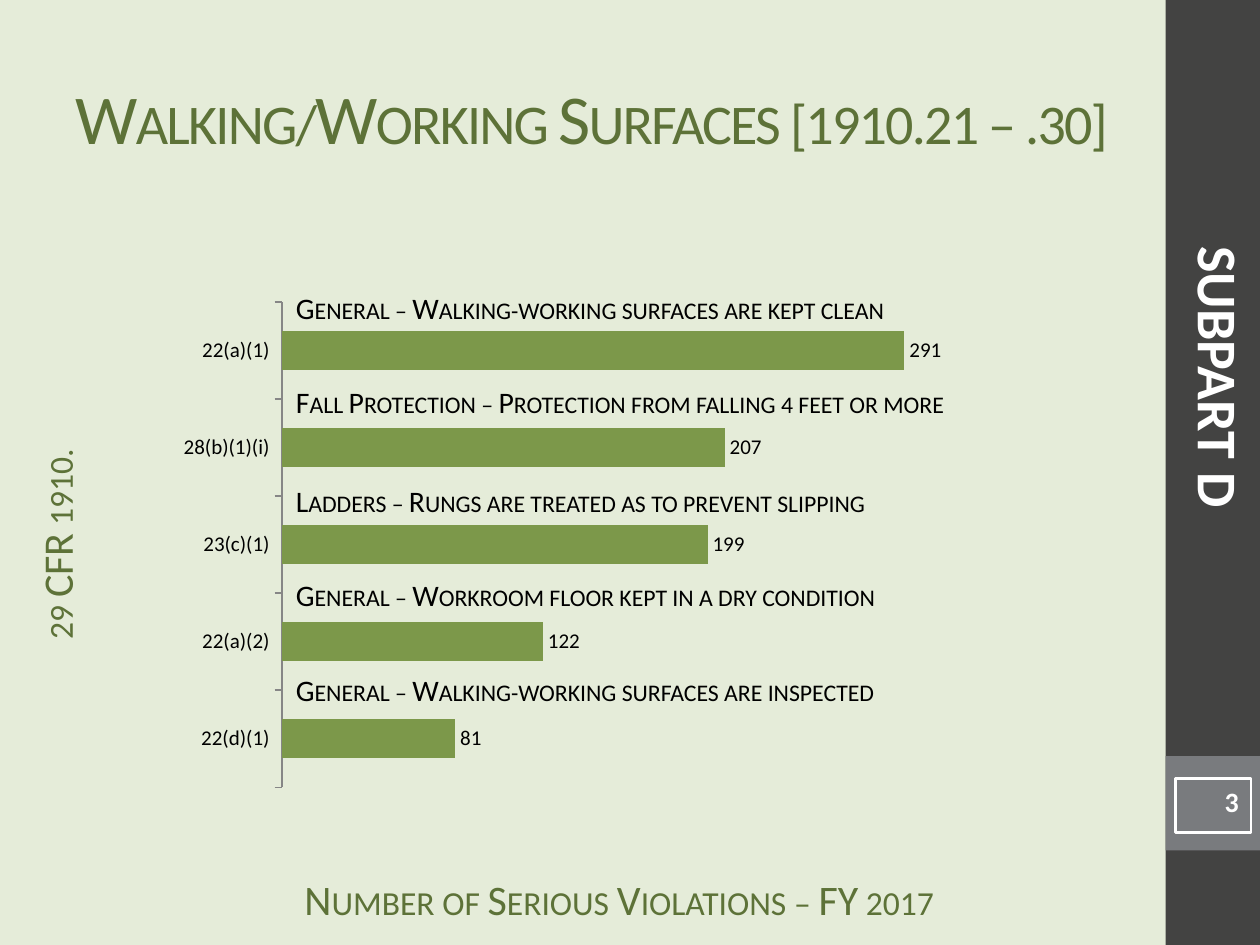
from dataclasses import dataclass

from lxml.etree import SubElement
from pptx import Presentation
from pptx.chart.data import CategoryChartData
from pptx.dml.color import RGBColor
from pptx.enum.chart import XL_CHART_TYPE, XL_LABEL_POSITION, XL_TICK_LABEL_POSITION, XL_TICK_MARK
from pptx.enum.shapes import MSO_SHAPE
from pptx.enum.text import MSO_ANCHOR, MSO_AUTO_SIZE, PP_ALIGN
from pptx.oxml.ns import qn
from pptx.util import Inches, Pt


@dataclass(frozen=True)
class Theme:
    font: str = "Calibri"
    background: str = "E5ECD9"
    band: str = "434342"
    number_panel: str = "797B7E"
    heading: str = "5D7238"
    bar: str = "7C984A"
    axis: str = "868686"
    black: str = "000000"
    white: str = "FFFFFF"
    title_size: int = 40
    subpart_size: int = 32
    axis_title_size: int = 24
    caption_size: int = 17
    number_size: int = 16
    chart_size: int = 12


@dataclass(frozen=True)
class Box:
    left: float
    top: float
    width: float
    height: float

    def lengths(self) -> tuple:
        return tuple(Inches(n) for n in (self.left, self.top, self.width, self.height))


@dataclass(frozen=True)
class Violation:
    standard: str
    count: int
    caption: str
    caption_top: float
    caption_width: float


THEME = Theme()
AXIS_TITLE_INSETS = (0.1, 0, 0.1, 0.05)
CHART_BOX = Box(1.33, 2.25, 6.99, 4.08)
CAPTION_LEFT, CAPTION_HEIGHT = 2.25, 0.39

VIOLATIONS = [
    Violation("22(a)(1)", 291, "General – Walking-working surfaces are kept clean", 2.25, 5.02),
    Violation("28(b)(1)(i)", 207, "Fall Protection – Protection from falling 4 feet or more", 3, 5.55),
    Violation("23(c)(1)", 199, "Ladders – Rungs are treated as to prevent slipping", 3.78, 4.89),
    Violation("22(a)(2)", 122, "General – Workroom floor kept in a dry condition", 4.53, 4.96),
    Violation("22(d)(1)", 81, "General – Walking-working surfaces are inspected", 5.28, 5.5),
]


def color(value: str) -> RGBColor:
    return RGBColor.from_string(value)


def write_text(shape, text: str, *, size: int, ink: str, bold=False, small_caps=False,
               spacing=0, align=PP_ALIGN.LEFT, anchor=MSO_ANCHOR.TOP, wrap=True,
               grow=False, insets=(0.1, 0.05, 0.1, 0.05)) -> None:
    frame = shape.text_frame
    frame.word_wrap = wrap
    frame.auto_size = MSO_AUTO_SIZE.SHAPE_TO_FIT_TEXT if grow else MSO_AUTO_SIZE.NONE
    frame.vertical_anchor = anchor
    (frame.margin_left, frame.margin_top,
     frame.margin_right, frame.margin_bottom) = (Inches(n) for n in insets)
    paragraph = frame.paragraphs[0]
    paragraph.alignment = align
    run = paragraph.add_run()
    run.text = text
    run.font.name, run.font.size, run.font.bold = THEME.font, Pt(size), bold
    run.font.color.rgb = color(ink)
    properties = run._r.get_or_add_rPr()
    if small_caps:
        properties.set("cap", "small")
    if spacing:
        properties.set("spc", str(spacing * 100))


def add_text(slide, box: Box, text: str, *, rotation=0, **text_format) -> None:
    shape = slide.shapes.add_textbox(*box.lengths())
    shape.rotation = rotation
    write_text(shape, text, **text_format)


def add_rectangle(slide, box: Box, *, fill=None, line=None):
    shape = slide.shapes.add_shape(MSO_SHAPE.RECTANGLE, *box.lengths())
    shape.shadow.inherit = False
    if fill:
        shape.fill.solid()
        shape.fill.fore_color.rgb = color(fill)
    else:
        shape.fill.background()
    if line:
        shape.line.color.rgb = color(line)
        shape.line.width = Pt(1.5)
    else:
        shape.line.fill.background()
    return shape


def set_plot_layout(chart, **fractions: float) -> None:
    plot_area = chart._chartSpace.chart.plotArea
    for old_layout in plot_area.findall(qn("c:layout")):
        plot_area.remove(old_layout)
    layout = SubElement(plot_area, qn("c:layout"))
    plot_area.insert(0, layout)
    manual = SubElement(layout, qn("c:manualLayout"))
    settings = {"layoutTarget": "inner", "xMode": "edge", "yMode": "edge", **fractions}
    for name, value in settings.items():
        SubElement(manual, qn(f"c:{name}")).set("val", str(value))


def add_violation_chart(slide, violations: list[Violation]) -> None:
    data = CategoryChartData()
    bottom_up = violations[::-1]
    data.categories = [violation.standard for violation in bottom_up]
    data.add_series("Series 1", [violation.count for violation in bottom_up])
    chart = slide.shapes.add_chart(
        XL_CHART_TYPE.BAR_CLUSTERED, *CHART_BOX.lengths(), data).chart
    chart.has_legend = chart.has_title = False
    chart.font.name, chart.font.size = THEME.font, Pt(THEME.chart_size)
    chart.font.color.rgb = color(THEME.black)

    # Axes
    category_axis, value_axis = chart.category_axis, chart.value_axis
    category_axis.major_tick_mark = XL_TICK_MARK.OUTSIDE
    category_axis.tick_label_position = XL_TICK_LABEL_POSITION.NEXT_TO_AXIS
    category_axis.format.line.color.rgb = color(THEME.axis)
    category_axis.has_major_gridlines = False
    value_axis.minimum_scale, value_axis.maximum_scale = 0, 350
    value_axis.has_major_gridlines = False
    value_axis.visible = False

    # Bars and their values
    plot = chart.plots[0]
    plot.gap_width, plot.vary_by_categories = 150, False
    fill = plot.series[0].format.fill
    fill.solid()
    fill.fore_color.rgb = color(THEME.bar)
    plot.has_data_labels = True
    plot.data_labels.show_value = True
    plot.data_labels.position = XL_LABEL_POSITION.OUTSIDE_END
    plot.data_labels.font.size = Pt(THEME.chart_size)
    set_plot_layout(chart, x=0.13, y=0.036, w=0.85, h=0.944)


def main() -> None:
    presentation = Presentation()
    presentation.slide_width, presentation.slide_height = Inches(10), Inches(7.5)
    slide = presentation.slides.add_slide(presentation.slide_layouts[6])
    slide.background.fill.solid()
    slide.background.fill.fore_color.rgb = color(THEME.background)

    # Side band with slide number
    add_rectangle(slide, Box(9.25, 0, 0.75, 7.5), fill=THEME.band)
    add_rectangle(slide, Box(9.25, 6, 0.75, 0.75), fill=THEME.number_panel)
    number_box = add_rectangle(slide, Box(9.33, 6.18, 0.6, 0.43), line=THEME.white)
    write_text(number_box, "3", size=THEME.number_size, ink=THEME.white, bold=True,
               align=PP_ALIGN.RIGHT)
    add_text(slide, Box(6.69, 2.67, 5.98, 0.64), "SUBPART D", rotation=90, grow=True,
             size=THEME.subpart_size, ink=THEME.white, bold=True, align=PP_ALIGN.CENTER)

    # Title and axis titles
    add_text(slide, Box(0.5, 0.3, 8.75, 1.25), "Walking/Working Surfaces [1910.21 – .30]",
             size=THEME.title_size, ink=THEME.heading, small_caps=True, spacing=-1,
             anchor=MSO_ANCHOR.MIDDLE)
    for text, box, rotation in (
        ("Number of Serious Violations – FY 2017", Box(2.08, 6.93, 5.67, 0.33), 0),
        ("29 CFR 1910.", Box(-1.56, 4.03, 4.19, 0.58), 270),
    ):
        add_text(slide, box, text, rotation=rotation, size=THEME.axis_title_size,
                 ink=THEME.heading, small_caps=True, align=PP_ALIGN.CENTER,
                 insets=AXIS_TITLE_INSETS)

    # Chart with a caption above each bar
    add_violation_chart(slide, VIOLATIONS)
    for violation in VIOLATIONS:
        box = Box(CAPTION_LEFT, violation.caption_top, violation.caption_width, CAPTION_HEIGHT)
        add_text(slide, box, violation.caption, size=THEME.caption_size, ink=THEME.black,
                 small_caps=True, wrap=False, grow=True)

    presentation.save("out.pptx")


if __name__ == "__main__":
    main()
